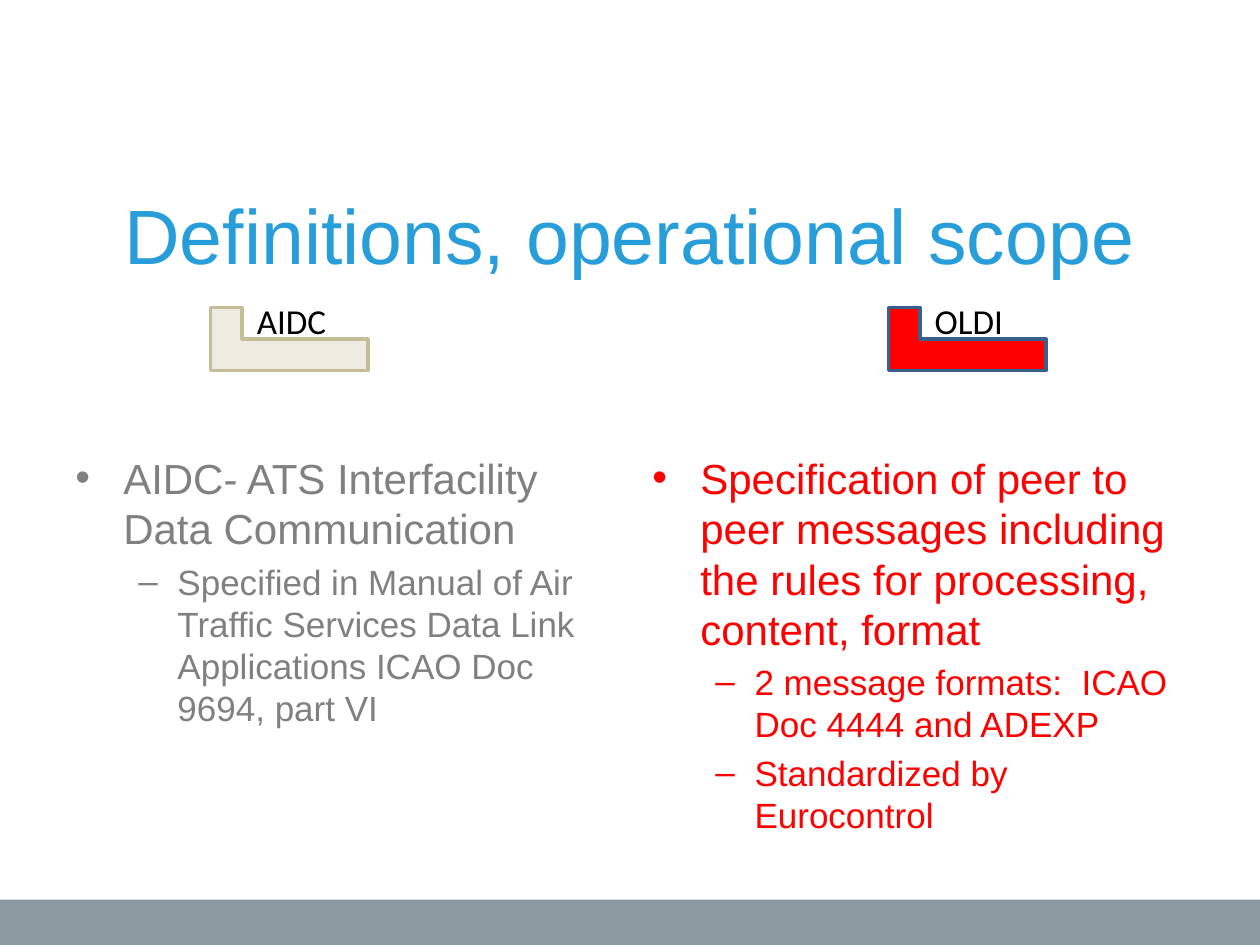
from dataclasses import dataclass

from lxml.etree import SubElement
from pptx import Presentation
from pptx.dml.color import RGBColor
from pptx.enum.shapes import MSO_SHAPE as Shape
from pptx.enum.text import MSO_ANCHOR as Anchor, PP_ALIGN as Align
from pptx.oxml.ns import qn
from pptx.util import Inches, Pt

WIDTH, HEIGHT = 10, 7.5
MARGIN = 0.5
COLUMN_WIDTH, COLUMN_STEP = 4.42, 4.58
BODY_TOP, BODY_HEIGHT = 3.54, 3.36
BLUE, SLATE, GREY, RED, BLACK = "279DD9", "8C99A1", "808080", "FF0000", "000000"


@dataclass
class Level:
    bullet: str
    size: float
    indent: float
    hanging: float


@dataclass
class Topic:
    label: str
    label_width: float
    corner_left: float
    fill: str
    line: str
    text_color: str
    items: list[tuple[int, str]]


LEVELS = [Level("•", 24, 0.38, 0.38), Level("–", 20, 0.81, 0.31)]
TOPICS = [
    Topic("AIDC", 0.76, 1.67, "EEECE1", "C4BD97", GREY, [
        (0, "AIDC- ATS Interfacility Data Communication"),
        (1, "Specified in Manual of Air Traffic Services Data Link "
            "Applications ICAO Doc 9694, part VI"),
    ]),
    Topic("OLDI", 0.75, 7.05, RED, "3A5F8C", RED, [
        (0, "Specification of peer to peer messages including the rules "
            "for processing, content, format"),
        (1, "2 message formats:  ICAO Doc 4444 and ADEXP"),
        (1, "Standardized by Eurocontrol"),
    ]),
]


def color(value: str) -> RGBColor:
    return RGBColor.from_string(value)


def add_block(slide, kind, left, top, width, height, fill, line=None):
    shape = slide.shapes.add_shape(
        kind, Inches(left), Inches(top), Inches(width), Inches(height))
    shape.shadow.inherit = False
    shape.fill.solid()
    shape.fill.fore_color.rgb = color(fill)
    if line:
        shape.line.color.rgb = color(line)
        shape.line.width = Pt(2)
    else:
        shape.line.fill.background()
    return shape


def add_frame(slide, left, top, width, height, wrap=True, inset=0.05):
    box = slide.shapes.add_textbox(
        Inches(left), Inches(top), Inches(width), Inches(height))
    settings = {"word_wrap": wrap, "vertical_anchor": Anchor.TOP,
                "margin_top": Inches(inset)}
    for name, value in settings.items():
        setattr(box.text_frame, name, value)
    return box.text_frame


def write(paragraph, text: str, size: float, fill: str, font: str = "Arial"):
    run = paragraph.add_run()
    run.text = text
    for name, value in {"size": Pt(size), "name": font}.items():
        setattr(run.font, name, value)
    run.font.color.rgb = color(fill)


def set_bullet(paragraph, level: Level):
    properties = paragraph._p.get_or_add_pPr()
    properties.set("marL", str(Inches(level.indent)))
    properties.set("indent", str(-Inches(level.hanging)))
    SubElement(properties, qn("a:buFont"), typeface="Arial")
    SubElement(properties, qn("a:buChar"), char=level.bullet)


def add_body(slide, topic: Topic, column: int):
    frame = add_frame(slide, MARGIN + column * COLUMN_STEP, BODY_TOP,
                      COLUMN_WIDTH, BODY_HEIGHT)
    for index, (depth, text) in enumerate(topic.items):
        paragraph = frame.add_paragraph() if index else frame.paragraphs[0]
        level = LEVELS[depth]
        set_bullet(paragraph, level)
        paragraph.level = depth
        paragraph.space_before = Pt(0.2 * level.size if index else 0)
        write(paragraph, text, level.size, topic.text_color)


def add_label(slide, topic: Topic):
    add_block(slide, Shape.CORNER, topic.corner_left, 2.44, 1.25, 0.5,
              topic.fill, topic.line)
    frame = add_frame(slide, topic.corner_left + 0.27, 2.33,
                      topic.label_width, 0.44, wrap=False)
    write(frame.paragraphs[0], topic.label, 20, BLACK, "Calibri")


def main():
    presentation = Presentation()
    presentation.slide_width, presentation.slide_height = Inches(WIDTH), Inches(HEIGHT)
    slide = presentation.slides.add_slide(presentation.slide_layouts[6])

    # Footer band
    add_block(slide, Shape.RECTANGLE, 0, HEIGHT - 0.36, WIDTH, 0.36, SLATE)

    # Title
    title = add_frame(slide, MARGIN, 1.44, WIDTH - 2 * MARGIN, 1.25)
    title.paragraphs[0].alignment = Align.CENTER
    write(title.paragraphs[0], "Definitions, operational scope", 44, BLUE)

    # Topic columns: bulleted text and corner label
    for column, topic in enumerate(TOPICS):
        add_body(slide, topic, column)
        add_label(slide, topic)

    presentation.save("out.pptx")


if __name__ == "__main__":
    main()
